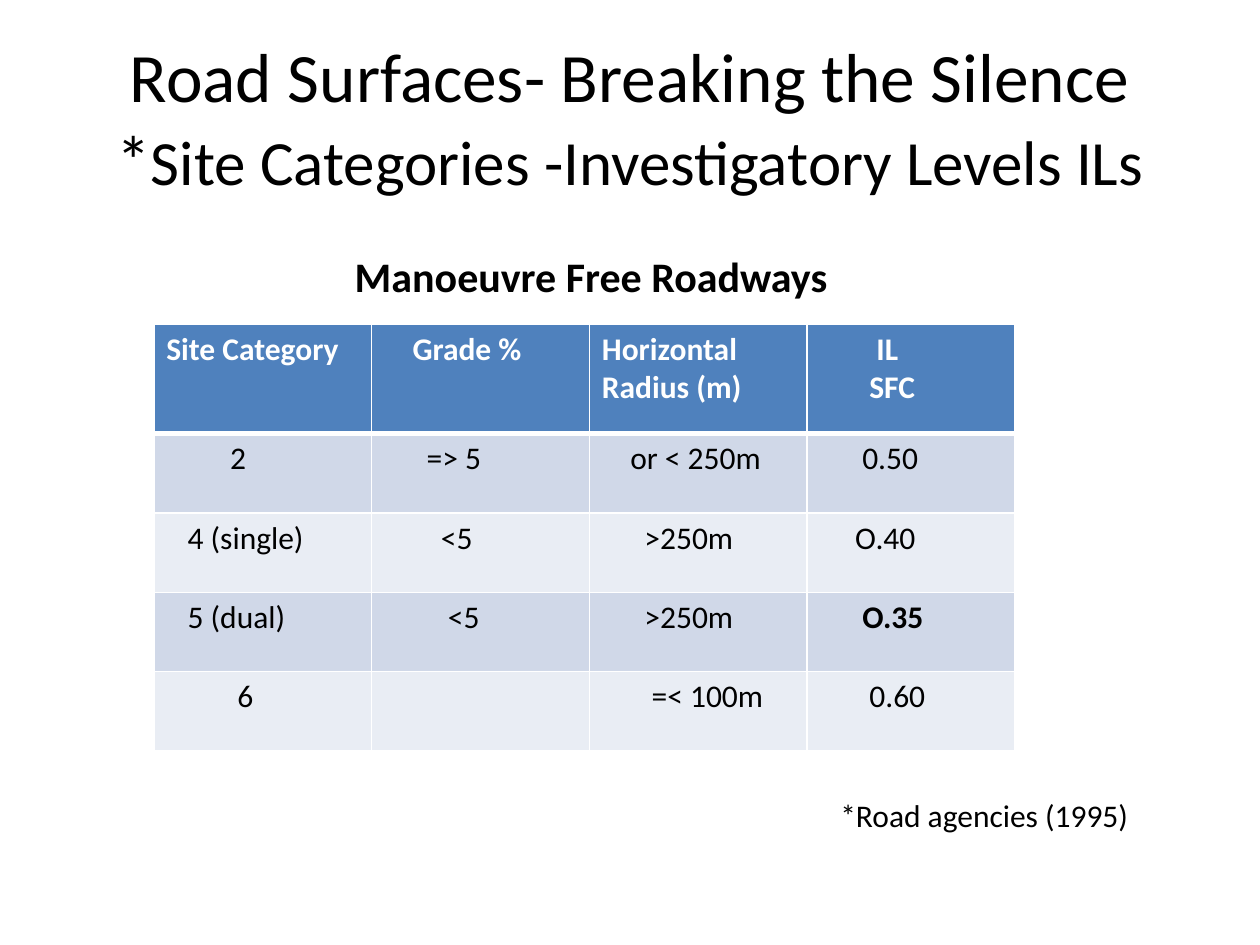
from lxml import etree
from pptx import Presentation
from pptx import util as u
from pptx.dml.color import RGBColor
from pptx.enum import text
from pptx.oxml.ns import qn

# Content
TITLE = [[("Road Surfaces- Breaking the Silence", 39.6)],
         [("*", 39.6), ("Site Categories -Investigatory Levels ILs", 36)]]
SUBTITLE = "Manoeuvre Free Roadways"
SOURCE_NOTE = "*Road agencies (1995)"
# Each cell: list of (line, indent steps)
ROWS = [
    [[("Site Category", 0)], [("Grade %", 4)],
     [("Horizontal", 0), ("Radius (m)", 0)], [("IL", 8), ("SFC", 7)]],
    [[("2", 9)], [("=> 5", 6)], [("or < 250m", 4)], [("0.50", 6)]],
    [[("4 (single)", 3)], [("<5", 8)], [(">250m", 6)], [("O.40", 5)]],
    [[("5 (dual)", 3)], [("<5", 9)], [(">250m", 6)], [("O.35", 6)]],
    [[("6", 10)], [], [("=< 100m", 7)], [("0.60", 7)]],
]
BOLD_VALUES = {"O.35"}

# Style
FONT = "Calibri"
COLORS = {"text": "000000", "header": "4F81BD", "header_text": "FFFFFF",
          "band_dark": "D0D8E8", "band_light": "E9EDF4", "border": "FFFFFF"}
INDENT_STEP = 0.143
COLUMN_WIDTHS = [4.39, 4.39, 4.39, 4.19]
HEADER_HEIGHT, ROW_HEIGHT = 2.21, 1.6


def add_run(paragraph, words, size=18, color="text", bold=False):
    run = paragraph.add_run()
    run.text = words
    run.font.name = FONT
    run.font.size = u.Pt(size)
    run.font.bold = bold
    run.font.color.rgb = RGBColor.from_string(COLORS[color])


def indent(paragraph, steps):
    properties = paragraph._p.get_or_add_pPr()
    properties.set("marL", str(u.Cm(steps * INDENT_STEP)))
    properties.set("indent", "0")


def set_borders(cell, top, bottom):
    properties = cell._tc.get_or_add_tcPr()
    widths = {"a:lnL": 1, "a:lnR": 1, "a:lnT": top, "a:lnB": bottom}
    for position, (tag, width) in enumerate(widths.items()):
        line = etree.Element(qn(tag), w=str(u.Pt(width)))
        fill = etree.SubElement(line, qn("a:solidFill"))
        etree.SubElement(fill, qn("a:srgbClr"), val=COLORS["border"])
        properties.insert(position, line)


def add_label(slide, left, top, width, height, words, size=18, bold=False, steps=0):
    shape = slide.shapes.add_textbox(u.Cm(left), u.Cm(top), u.Cm(width), u.Cm(height))
    shape.text_frame.word_wrap = True
    paragraph = shape.text_frame.paragraphs[0]
    indent(paragraph, steps)
    add_run(paragraph, words, size, bold=bold)


def add_title(slide):
    title = slide.shapes.title
    title.left, title.top = u.Cm(1.27), u.Cm(0.76)
    title.width, title.height = u.Cm(22.86), u.Cm(3.18)
    frame = title.text_frame
    frame.auto_size = text.MSO_AUTO_SIZE.NONE
    frame.vertical_anchor = text.MSO_ANCHOR.MIDDLE
    paragraph = frame.paragraphs[0]
    paragraph.alignment = text.PP_ALIGN.CENTER
    for number, line in enumerate(TITLE):
        if number:
            paragraph.add_line_break()
        for words, size in line:
            add_run(paragraph, words, size)


def fill_cell(cell, lines, row):
    header = row == 0
    band = "header" if header else "band_dark" if row % 2 else "band_light"
    cell.fill.solid()
    cell.fill.fore_color.rgb = RGBColor.from_string(COLORS[band])
    set_borders(cell, top=3 if row == 1 else 1, bottom=3 if header else 1)
    frame = cell.text_frame
    for number, (words, steps) in enumerate(lines):
        paragraph = frame.add_paragraph() if number else frame.paragraphs[0]
        indent(paragraph, steps)
        add_run(paragraph, words, color="header_text" if header else "text",
                bold=header or words in BOLD_VALUES)


def add_site_table(slide):
    heights = [HEADER_HEIGHT] + [ROW_HEIGHT] * (len(ROWS) - 1)
    table = slide.shapes.add_table(
        len(ROWS), len(COLUMN_WIDTHS), u.Cm(3.1), u.Cm(6.53),
        u.Cm(sum(COLUMN_WIDTHS)), u.Cm(sum(heights))).table
    for column, width in zip(table.columns, COLUMN_WIDTHS):
        column.width = u.Cm(width)
    for row, (cells, height) in enumerate(zip(ROWS, heights)):
        table.rows[row].height = u.Cm(height)
        for column, lines in enumerate(cells):
            fill_cell(table.cell(row, column), lines, row)


def main():
    presentation = Presentation()
    presentation.slide_width, presentation.slide_height = u.Cm(25.4), u.Cm(19.05)
    slide = presentation.slides.add_slide(presentation.slide_layouts[5])
    add_title(slide)
    add_site_table(slide)
    add_label(slide, 16.69, 15.93, 6.81, 1.02, SOURCE_NOTE)
    add_label(slide, 4.9, 4.93, 12.19, 1.27, SUBTITLE, size=24, bold=True, steps=14)
    presentation.save("out.pptx")


if __name__ == "__main__":
    main()
